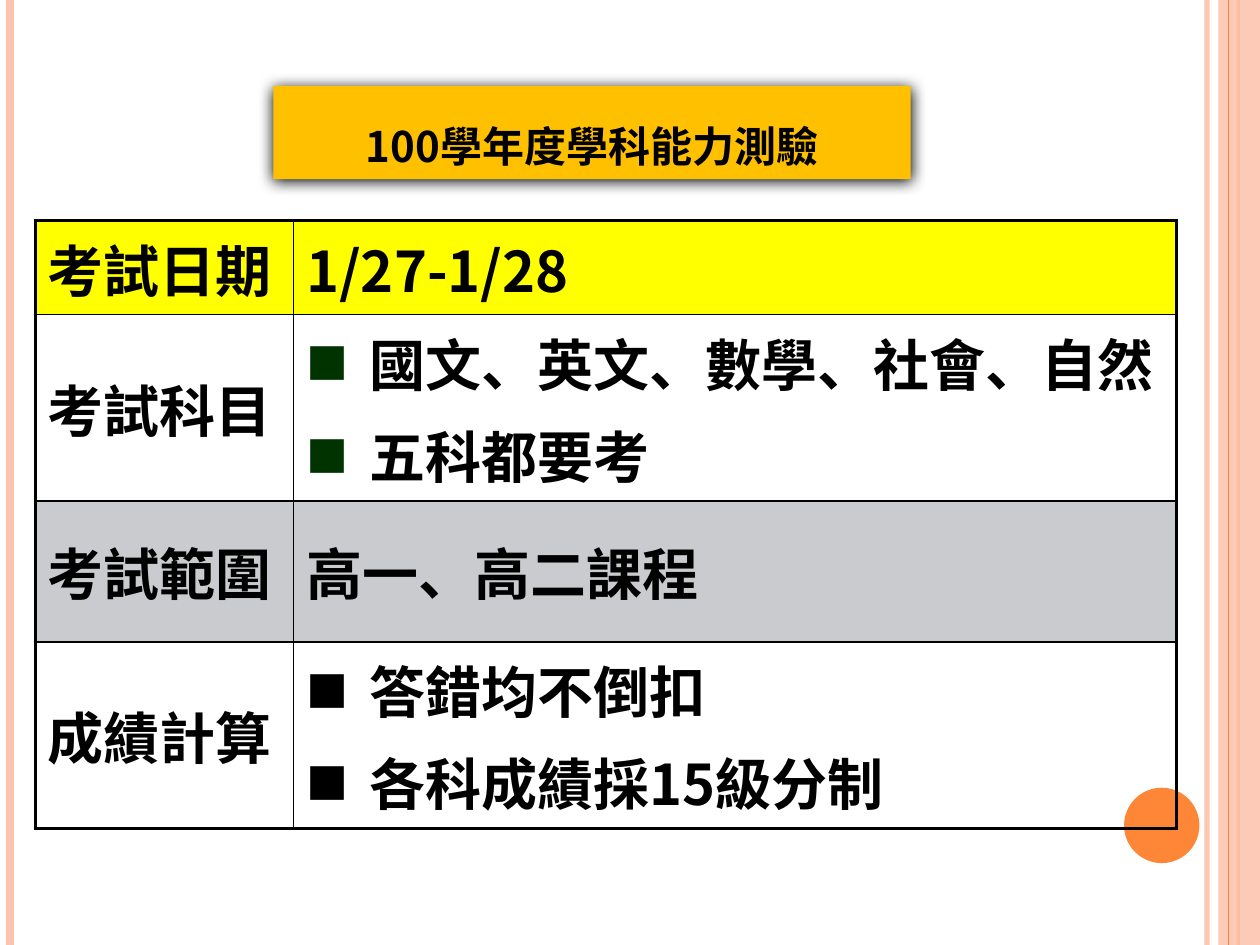
from pptx import Presentation
from pptx.dml.color import RGBColor
from pptx.enum.shapes import MSO_CONNECTOR, MSO_SHAPE
from pptx.enum.text import MSO_ANCHOR, MSO_AUTO_SIZE, PP_ALIGN
from pptx.oxml import parse_xml
from pptx.oxml.ns import nsdecls, qn
from pptx.util import Cm, Pt
from lxml.etree import SubElement

# Content
TITLE = "100學年度學科能力測驗"
ROWS = [  # label, lines, fill, bullet colour, height
    ("考試日期", ["1/27-1/28"], "FFFF00", None, 1.88),
    ("考試科目", ["國文、英文、數學、社會、自然", "五科都要考"], None, "003300", 2.84),
    ("考試範圍", ["高一、高二課程"], "C9CBCE", None, 2.84),
    ("成績計算", ["答錯均不倒扣", "各科成績採15級分制"], None, "000000", 2.84),
]
COLS = [5.21, 17.8]
BARS = [  # x, colour, width, opacity
    (24.33, "FEC3AE", 3, 93),
    (0.2, "FEC3AE", 4.5, 100),
    (24.97, "FE8637", 1.5, 100),
    (24.77, "FE8637", 0.75, 100),
]
FONT = "Noto Sans CJK SC"
WIDE, HIGH = 25.4, 19.05


def paint(color, hex, alpha=100):
    color.rgb = RGBColor.from_string(hex)
    if alpha < 100:
        for node in color._xFill.iter(qn("a:srgbClr")):
            SubElement(node, qn("a:alpha"), val=str(alpha * 1000))


def fill(part, hex, alpha=100):
    part.fill.solid()
    paint(part.fill.fore_color, hex, alpha)


def write(para, text, size=32, color="000000", caps=False, align=None):
    para.alignment = align
    run = para.add_run()
    run.text = text
    font = run.font
    font.size, font.bold, font.name = Pt(size), True, FONT
    paint(font.color, color)
    props = run._r.get_or_add_rPr()
    SubElement(props, qn("a:ea"), typeface=FONT)
    if caps:
        props.set("cap", "small")


def space(para, bullet):
    props = para._p.get_or_add_pPr()
    gap = SubElement(props, qn("a:spcBef"))
    SubElement(gap, qn("a:spcPct"), val="20000")
    if bullet:
        props.set("marL", str(Cm(1.27)))
        props.set("indent", str(-Cm(1.27)))
        tint = SubElement(props, qn("a:buClr"))
        SubElement(tint, qn("a:srgbClr"), val=bullet)
        SubElement(props, qn("a:buSzPct"), val="75000")
        SubElement(props, qn("a:buFont"), typeface=FONT)
        SubElement(props, qn("a:buChar"), char="■")


def border(cell, widths):
    props = cell._tc.get_or_add_tcPr()
    for i, (side, width) in enumerate(zip("LRTB", widths)):
        props.insert(i, parse_xml(
            f'<a:ln{side} {nsdecls("a")} w="{Pt(width)}"><a:solidFill>'
            f'<a:srgbClr val="000000"/></a:solidFill></a:ln{side}>'))


deck = Presentation()
deck.slide_width, deck.slide_height = Cm(WIDE), Cm(HIGH)
slide = deck.slides.add_slide(deck.slide_layouts[5])
shapes = slide.shapes


def add_bar(x, hex, width, alpha):
    bar = shapes.add_connector(MSO_CONNECTOR.STRAIGHT, Cm(x), 0, Cm(x), Cm(HIGH))
    bar.line.width = Pt(width)
    bar.line.fill.solid()
    paint(bar.line.color, hex)
    if alpha < 100:
        for node in bar.line._ln.iter(qn("a:srgbClr")):
            SubElement(node, qn("a:alpha"), val=str(alpha * 1000))
    SubElement(bar._element.spPr, qn("a:effectLst"))


def add_block(kind, x, y, w, h, hex, alpha=100):
    block = shapes.add_shape(kind, Cm(x), Cm(y), Cm(w), Cm(h))
    block.shadow.inherit = False
    block.line.fill.background()
    block.fill.solid()
    block.fill.fore_color.rgb = RGBColor.from_string(hex)
    if alpha < 100:
        for node in block._element.spPr.iter(qn("a:srgbClr")):
            SubElement(node, qn("a:alpha"), val=str(alpha * 1000))


# Side stripes and dot
for bar in BARS[:3]:
    add_bar(*bar)
add_block(MSO_SHAPE.RECTANGLE, 24.56, 0, 0.84, HIGH, "FEC3AE", 87)
add_bar(*BARS[3])
add_block(MSO_SHAPE.OVAL, 22.66, 15.88, 1.52, 1.52, "FE8637")

# Title with a soft shadow
title = shapes.title
title.left, title.top, title.width, title.height = map(Cm, (5.51, 1.73, 12.85, 1.88))
fill(title, "FFC000")
title.line.fill.background()
glow = SubElement(title._element.spPr, qn("a:effectLst"))
shade = SubElement(glow, qn("a:outerShdw"), blurRad=str(Pt(8.5)), dist=str(Pt(1)),
                   dir="5400000", algn="ctr", rotWithShape="0")
SubElement(shade, qn("a:srgbClr"), val="000000")
frame = title.text_frame
frame.auto_size = MSO_AUTO_SIZE.NONE
frame.vertical_anchor = MSO_ANCHOR.BOTTOM
write(frame.paragraphs[0], TITLE, size=30, caps=True, align=PP_ALIGN.CENTER)

# Table: thick outer frame, thin inner rules
table = shapes.add_table(len(ROWS), len(COLS), Cm(0.71), Cm(4.45), Cm(sum(COLS)),
                         Cm(sum(row[-1] for row in ROWS))).table
table.first_row = table.horz_banding = False
for col, width in zip(table.columns, COLS):
    col.width = Cm(width)
for r, (label, lines, hue, bullet, height) in enumerate(ROWS):
    table.rows[r].height = Cm(height)
    for c, texts in enumerate(([label], lines)):
        cell = table.cell(r, c)
        cell.vertical_anchor = MSO_ANCHOR.MIDDLE
        if hue:
            fill(cell, hue)
        else:
            cell.fill.background()
        edges = (c == 0, c == len(COLS) - 1, r == 0, r == len(ROWS) - 1)
        border(cell, [2.25 if edge else 1 for edge in edges])
        for i, text in enumerate(texts):
            body = cell.text_frame
            para = body.add_paragraph() if i else body.paragraphs[0]
            space(para, bullet if c else None)
            write(para, text)

deck.save("out.pptx")
